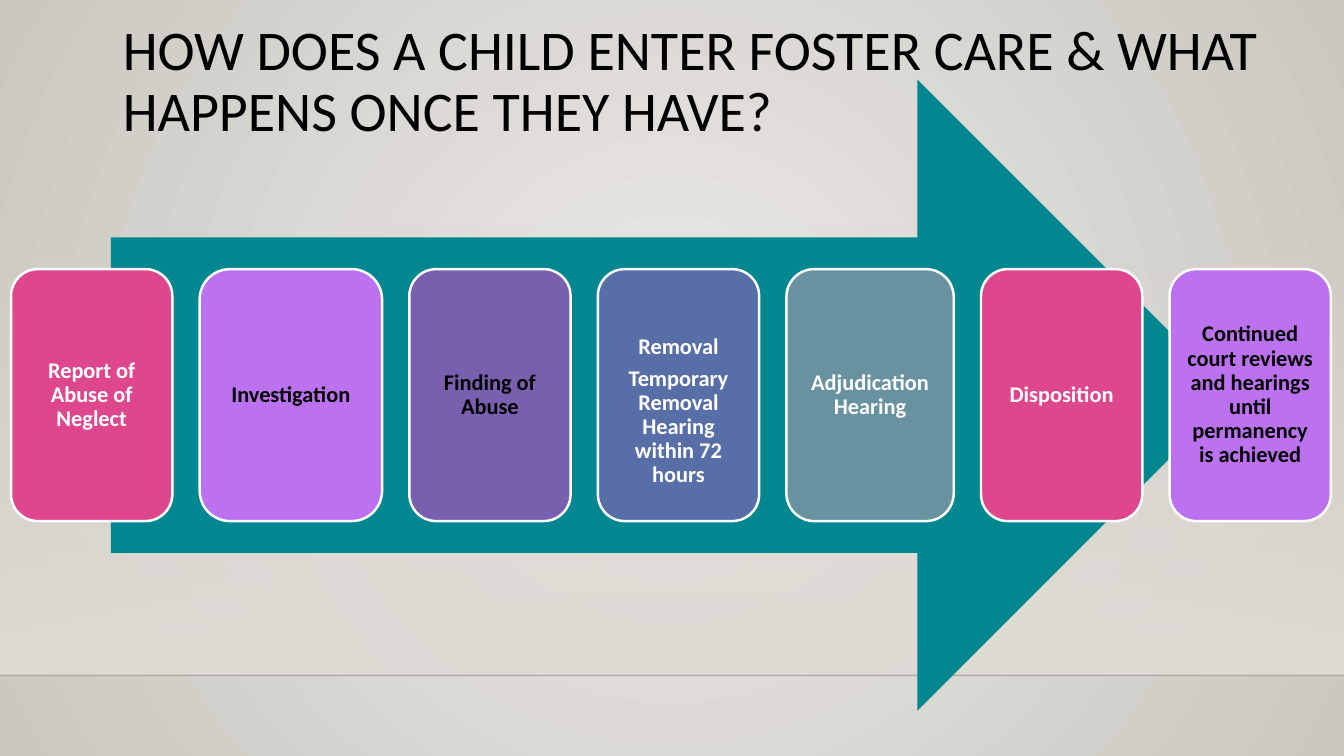
from lxml import etree
from pptx import Presentation
from pptx.dml.color import RGBColor
from pptx.enum.shapes import MSO_CONNECTOR, MSO_SHAPE
from pptx.enum.text import MSO_ANCHOR, PP_ALIGN
from pptx.oxml.ns import qn
from pptx.util import Inches, Pt

RECT, ARROW, ROUND = MSO_SHAPE.RECTANGLE, MSO_SHAPE.RIGHT_ARROW, MSO_SHAPE.ROUNDED_RECTANGLE
MIDDLE, BOTTOM = MSO_ANCHOR.MIDDLE, MSO_ANCHOR.BOTTOM
LEFT, CENTER = PP_ALIGN.LEFT, PP_ALIGN.CENTER

COLORS = {
    "bg_center": "ECEAE7", "bg_edge": "CAC7C1", "wall": "DFDBD5", "floor_line": "000001",
    "black": "000000", "white": "FFFFFF", "teal": "018790", "pink": "DE478E",
    "lilac": "BC72F0", "purple": "795FAF", "blue": "586EA6", "slate": "6892A0",
}
RGB = {name: RGBColor.from_string(value) for name, value in COLORS.items()}


def write_text(tf, lines, size, color, bold=False, align=LEFT, anchor=MIDDLE, inset=0.1, top=None):
    """Fill a text frame, one paragraph a line."""
    tf.word_wrap = True
    tf.vertical_anchor = anchor
    tf.margin_left = tf.margin_right = tf.margin_bottom = Inches(inset)
    tf.margin_top = Inches(inset if top is None else top)
    for i, line in enumerate(lines):
        p = tf.paragraphs[0] if i == 0 else tf.add_paragraph()
        p.alignment = align
        p.line_spacing = 0.9
        if i:
            p.space_before = Pt(0.35 * size)
        r = p.add_run()
        r.text = line
        r.font.name = "Calibri"
        r.font.size = Pt(size)
        r.font.bold = bold
        r.font.color.rgb = RGB[color]


def set_alpha(color_parent, percent):
    clr = next(color_parent.iter(qn("a:srgbClr")))
    etree.SubElement(clr, qn("a:alpha")).set("val", str(percent * 1000))


prs = Presentation()
prs.slide_width, prs.slide_height = Inches(13.33), Inches(7.5)
s = prs.slides.add_slide(prs.slide_layouts[6])

# Background: light centre fading to the edges
fill = s.background.fill
fill.gradient()
for stop, name, position in zip(fill.gradient_stops, ("bg_center", "bg_edge"), (0, 1)):
    stop.color.rgb = RGB[name]
    stop.position = position
lin = next(s.background._cSld.iter(qn("a:lin")))
radial = etree.Element(qn("a:path"), {"path": "circle"})
etree.SubElement(radial, qn("a:fillToRect"), {side: "50000" for side in "ltrb"})
lin.getparent().replace(lin, radial)

# Wall and floor line
wall = s.shapes.add_shape(RECT, 0, Inches(2.21), prs.slide_width, Inches(4.49))
wall.shadow.inherit = False
wall.line.fill.background()
wall.fill.gradient()
wall.fill.gradient_angle = 270
for position, stop in enumerate(wall.fill.gradient_stops):
    stop.color.rgb = RGB["wall"]
    stop.position = position
set_alpha(wall._element.spPr, 0)

floor = s.shapes.add_connector(MSO_CONNECTOR.STRAIGHT, 0, Inches(6.7), prs.slide_width, Inches(6.7))
floor.line.color.rgb = RGB["floor_line"]
floor.line.width = Pt(1)
set_alpha(floor._element.spPr, 20)
etree.SubElement(floor._element.spPr, qn("a:effectLst"))

# Title
title = s.shapes.add_textbox(Inches(1.12), Inches(0.68), Inches(11.8), Inches(0.84))
write_text(title.text_frame, ["HOW DOES A CHILD ENTER FOSTER CARE & WHAT HAPPENS ONCE THEY HAVE?"],
           40, "black", anchor=BOTTOM)

# Process arrow
arrow = s.shapes.add_shape(ARROW, Inches(1.1), Inches(0.79), Inches(11.13), Inches(6.26))
arrow.shadow.inherit = False
arrow.fill.solid()
arrow.fill.fore_color.rgb = RGB["teal"]
arrow.line.fill.background()

# Steps: width, fill, text colour, top inset, lines
STEPS = [
    (1.6, "pink", "white", 0.07, ["Report of Abuse of Neglect"]),
    (1.81, "lilac", "black", 0.07, ["Investigation"]),
    (1.6, "purple", "black", 0.07, ["Finding of Abuse"]),
    (1.6, "blue", "white", 0.39, ["Removal", "Temporary Removal Hearing within 72 hours"]),
    (1.66, "slate", "white", 0.07, ["Adjudication Hearing"]),
    (1.6, "pink", "white", 0.07, ["Disposition"]),
    (1.6, "lilac", "black", 0.07, ["Continued court reviews and hearings until permanency is achieved"]),
]
GAP = 0.27
left = 0.11
for width, color, text_color, top, lines in STEPS:
    sp = s.shapes.add_shape(ROUND, Inches(left), Inches(2.67), Inches(width), Inches(2.5))
    sp.shadow.inherit = False
    sp.fill.solid()
    sp.fill.fore_color.rgb = RGB[color]
    sp.line.color.rgb = RGB["white"]
    sp.line.width = Pt(1.75)
    write_text(sp.text_frame, lines, 16, text_color, bold=True, align=CENTER, inset=0.07, top=top)
    left += width + GAP

prs.save("out.pptx")
